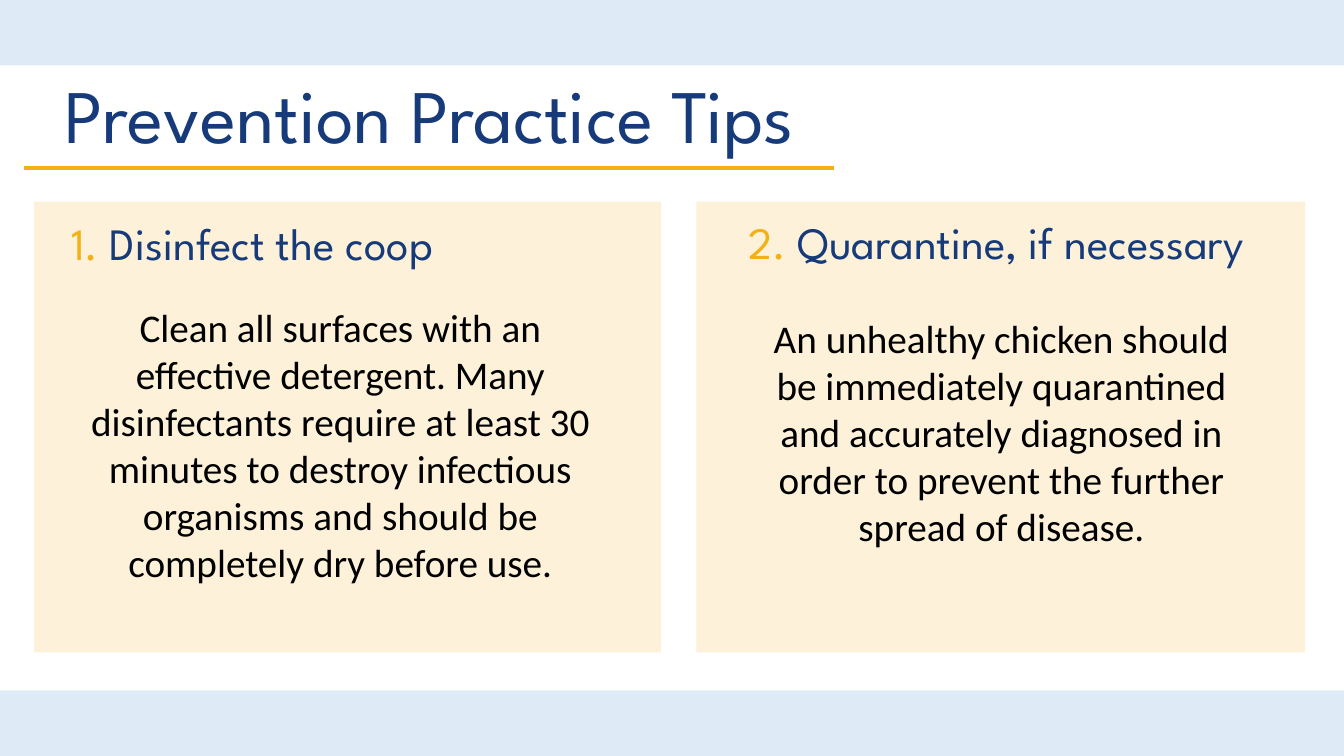
import pptx
import pptx.util
import pptx.dml.color
import pptx.enum.shapes
import pptx.enum.text
import pptx.oxml.ns
import lxml.etree

Cm = pptx.util.Cm
ANCHOR = pptx.enum.text.MSO_ANCHOR

# Content: boxes are left, top, width, height in centimetres
TITLE = "Prevention Practice Tips"
TITLE_BOX = (0.23, 1.32, 21.18, 2.84)
TIPS = [
    {
        "number": "1. ",
        "heading": "Disinfect the coop",
        "body": "Clean all surfaces with an effective detergent. Many disinfectants "
                "require at least 30 minutes to destroy infectious organisms and "
                "should be completely dry before use.",
        "card_box": (0.86, 5.08, 15.8, 11.36),
        "heading_box": (0.3, 5.3, 12.12, 1.63),
        "body_box": (1.83, 7.52, 13.49, 7.44),
    },
    {
        "number": "2. ",
        "heading": "Quarantine, if necessary",
        "body": "An unhealthy chicken should be immediately quarantined and "
                "accurately diagnosed in order to prevent the further spread "
                "of disease.",
        "card_box": (17.55, 5.08, 15.34, 11.36),
        "heading_box": (17.6, 5.28, 15.01, 1.63),
        "body_box": (18.77, 7.8, 12.93, 6.93),
    },
]

THEME = {
    "band": "DEEBF7",
    "accent": "F3B117",
    "card_alpha": 16,
    "title": {"name": "League Spartan", "size": 54, "color": "173B7A"},
    "number": {"name": "League Spartan", "size": 32, "color": "F3B117"},
    "heading": {"name": "League Spartan", "size": 32, "color": "173B7A"},
    "body": {"name": "Calibri", "size": 28, "color": "000000"},
}

# Layout
SLIDE_WIDTH, SLIDE_HEIGHT = 33.87, 19.05
BAND_HEIGHT = 1.65
RULE_LEFT, RULE_RIGHT, RULE_TOP = 0.61, 21.03, 4.24


def rgb(value):
    return pptx.dml.color.RGBColor.from_string(value)


def add_rectangle(slide, box, color, alpha=None):
    shape = slide.shapes.add_shape(
        pptx.enum.shapes.MSO_SHAPE.RECTANGLE, *map(Cm, box))
    shape.shadow.inherit = False
    shape.fill.solid()
    shape.fill.fore_color.rgb = rgb(color)
    shape.line.fill.background()
    if alpha is not None:
        color_element = shape.fill._xPr.find(".//" + pptx.oxml.ns.qn("a:srgbClr"))
        lxml.etree.SubElement(color_element, pptx.oxml.ns.qn("a:alpha"),
                              val=str(alpha * 1000))


def add_text(slide, box, runs, anchor=ANCHOR.TOP, line_spacing=None):
    frame = slide.shapes.add_textbox(*map(Cm, box)).text_frame
    frame.word_wrap = True
    frame.vertical_anchor = anchor
    paragraph = frame.paragraphs[0]
    settings = {"alignment": pptx.enum.text.PP_ALIGN.CENTER,
                "line_spacing": line_spacing}
    for name, value in settings.items():
        setattr(paragraph, name, value)
    for text, style in runs:
        run = paragraph.add_run()
        run.text = text
        formats = {"name": THEME[style]["name"],
                   "size": pptx.util.Pt(THEME[style]["size"])}
        for name, value in formats.items():
            setattr(run.font, name, value)
        run.font.color.rgb = rgb(THEME[style]["color"])


def add_rule(slide):
    rule = slide.shapes.add_connector(
        pptx.enum.shapes.MSO_CONNECTOR.STRAIGHT,
        Cm(RULE_LEFT), Cm(RULE_TOP), Cm(RULE_RIGHT), Cm(RULE_TOP))
    rule.line.color.rgb = rgb(THEME["accent"])
    rule.line.width = pptx.util.Pt(3)
    lxml.etree.SubElement(rule._element.spPr, pptx.oxml.ns.qn("a:effectLst"))


def main():
    presentation = pptx.Presentation()
    presentation.slide_width = Cm(SLIDE_WIDTH)
    presentation.slide_height = Cm(SLIDE_HEIGHT)
    slide = presentation.slides.add_slide(presentation.slide_layouts[6])

    # Bands along the top and bottom edges
    for top in (0, SLIDE_HEIGHT - BAND_HEIGHT):
        add_rectangle(slide, (0, top, SLIDE_WIDTH, BAND_HEIGHT), THEME["band"])

    # Title and its underline
    add_text(slide, TITLE_BOX, [(TITLE, "title")], ANCHOR.BOTTOM, 0.9)
    add_rule(slide)

    # Tip cards
    for tip in TIPS:
        add_rectangle(slide, tip["card_box"], THEME["accent"], THEME["card_alpha"])
        add_text(slide, tip["heading_box"],
                 [(tip["number"], "number"), (tip["heading"], "heading")])
        add_text(slide, tip["body_box"], [(tip["body"], "body")])

    presentation.save("out.pptx")


if __name__ == "__main__":
    main()
